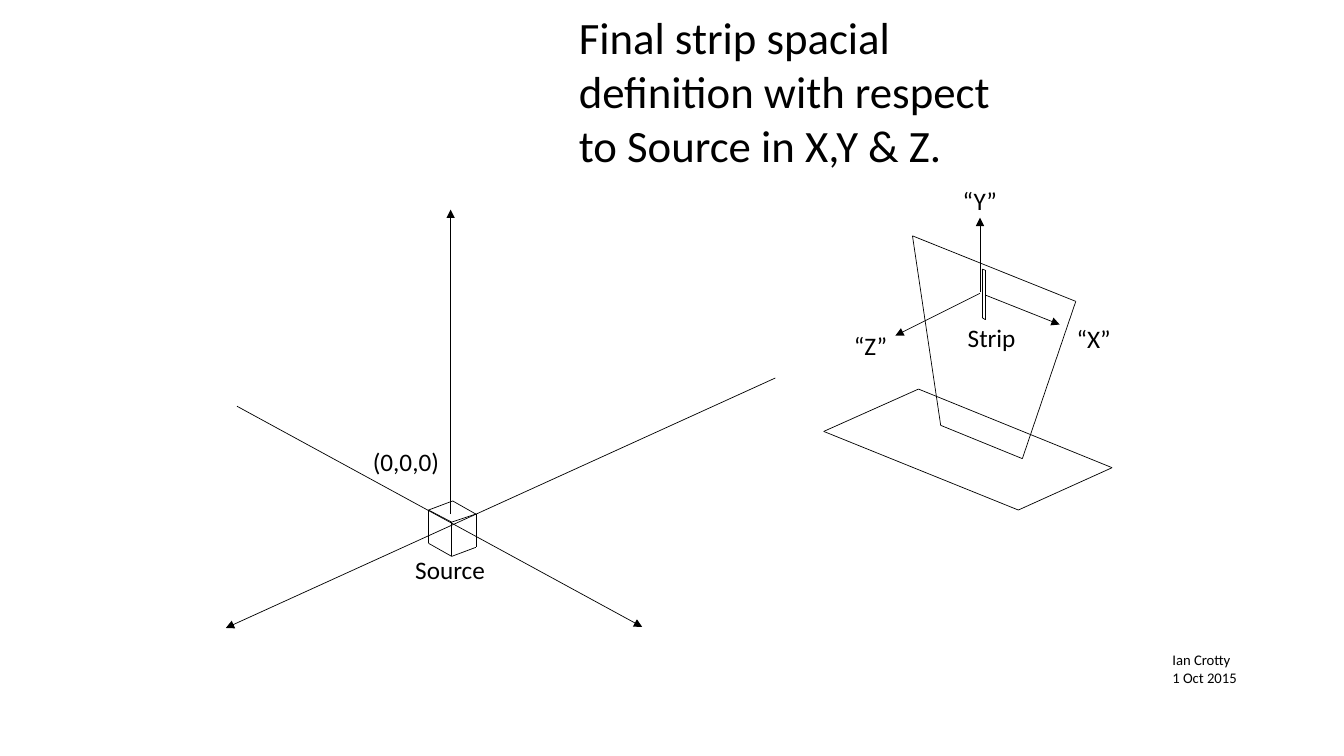
import itertools
import pptx
import pptx.dml.color
import pptx.enum.shapes
import pptx.enum.text
import pptx.oxml
import pptx.oxml.ns
import pptx.util
from pptx.util import Inches

BLACK = pptx.dml.color.RGBColor(0, 0, 0)
FONT = "Calibri"

TITLE = "Final strip spacial definition with respect to Source in X,Y & Z."
TITLE_BOX = (5.64, 0.05, 4.31, 1.72)

PANEL = [(9.05, 2.34), (10.67, 2.99), (10.14, 4.55), (9.33, 4.22), (9.05, 2.34)]
FLOOR = [(8.17, 4.28), (10.1, 5.06), (11.03, 4.64), (9.11, 3.86), (8.17, 4.28)]
CUBE_LEFT = [(4.25, 5.06), (4.48, 5.18), (4.48, 5.52), (4.25, 5.39), (4.25, 5.06)]
CUBE_RIGHT = [(4.48, 5.18), (4.72, 5.1), (4.72, 5.43), (4.48, 5.52)]
CUBE_TOP = [(4.25, 5.06), (4.49, 4.97), (4.72, 5.1)]
STRIP = [(9.74, 2.67), (9.77, 2.68), (9.77, 3.17), (9.74, 3.15), (9.74, 2.67)]
OUTLINES = [PANEL, FLOOR, CUBE_LEFT, CUBE_RIGHT, CUBE_TOP, STRIP]

SOURCE_AXES = [
    ((7.69, 3.75), (2.24, 6.23)),
    ((2.35, 4.03), (6.37, 6.22)),
    ((4.47, 5.1), (4.47, 2.08)),
]
STRIP_AXES = [
    ((9.72, 2.91), (8.88, 3.33)),
    ((9.72, 2.9), (9.72, 2.16)),
    ((9.78, 2.93), (10.51, 3.22)),
]

LABELS = [
    (["Source"], (4.02, 5.45, 0.9, 0.4), 18),
    (["Strip"], (9.5, 3.15, 0.7, 0.4), 18),
    (["(0,0,0)"], (3.6, 4.38, 0.86, 0.4), 18),
    (["“X”"], (10.58, 3.16, 0.56, 0.4), 18),
    (["“Y”"], (9.45, 1.79, 0.56, 0.4), 18),
    (["“Z”"], (8.37, 3.23, 0.56, 0.4), 18),
    (["Ian Crotty", "1 Oct 2015"], (11.53, 6.41, 0.86, 0.45), 10.5),
]


def add_line(page, start, end, arrow=False):
    line = page.shapes.add_connector(
        pptx.enum.shapes.MSO_CONNECTOR.STRAIGHT,
        *(Inches(value) for value in start + end),
    )
    line.line.color.rgb = BLACK
    line.line.width = pptx.util.Pt(0.5)
    properties = line._element.spPr
    properties.append(pptx.oxml.parse_xml(f"<a:effectLst {pptx.oxml.ns.nsdecls('a')}/>"))
    if arrow:
        line.line._get_or_add_ln().append(
            pptx.oxml.parse_xml(f'<a:tailEnd {pptx.oxml.ns.nsdecls("a")} type="triangle"/>')
        )


def write_text(frame, lines, size):
    frame.text = "\n".join(lines)
    frame.vertical_anchor = pptx.enum.text.MSO_ANCHOR.TOP
    for para in frame.paragraphs:
        para.alignment = pptx.enum.text.PP_ALIGN.LEFT
        para.font.name = FONT
        para.font.size = pptx.util.Pt(size)
        para.font.color.rgb = BLACK


def main():
    deck = pptx.Presentation()
    deck.slide_width, deck.slide_height = Inches(13.33), Inches(7.5)
    page = deck.slides.add_slide(deck.slide_layouts[5])

    title = page.shapes.title
    title.left, title.top, title.width, title.height = map(Inches, TITLE_BOX)
    write_text(title.text_frame, [TITLE], 32)
    title.text_frame.word_wrap = True
    title.text_frame.auto_size = pptx.enum.text.MSO_AUTO_SIZE.NONE

    for outline in OUTLINES:
        for start, end in itertools.pairwise(outline):
            add_line(page, start, end)
    for start, end in SOURCE_AXES + STRIP_AXES:
        add_line(page, start, end, arrow=True)

    for lines, place, size in LABELS:
        box = page.shapes.add_textbox(*map(Inches, place))
        box.text_frame.word_wrap = False
        write_text(box.text_frame, lines, size)

    deck.save("out.pptx")


if __name__ == "__main__":
    main()
